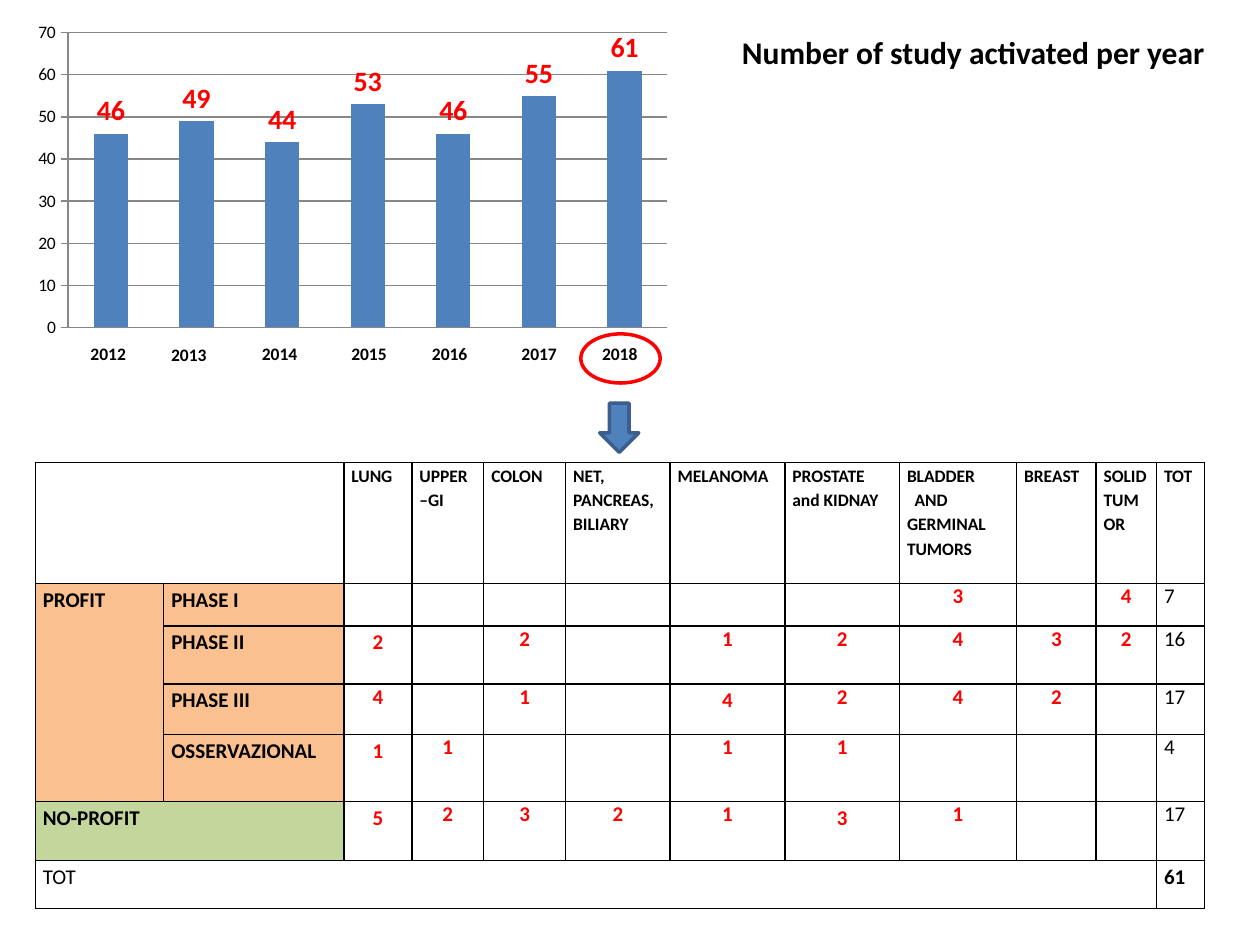
from lxml import etree
from pptx import Presentation
from pptx.chart.data import CategoryChartData
from pptx.dml.color import RGBColor
from pptx.enum.chart import XL_CHART_TYPE as ChartType, XL_LABEL_POSITION as LabelPos
from pptx.enum.chart import XL_TICK_MARK as Tick
from pptx.enum.shapes import MSO_SHAPE as Preset
from pptx.enum.text import MSO_ANCHOR as Anchor, PP_ALIGN as Align
from pptx.oxml import parse_xml
from pptx.oxml.ns import nsdecls, qn
from pptx.util import Inches, Pt

FONT = "Calibri"
COLORS = {
    "black": "000000", "white": "FFFFFF", "red": "FF0000", "blue": "4F81BD",
    "dark_blue": "3A5F8C", "grid": "878787", "profit": "FAC090", "no_profit": "C3D69B",
}
STYLES = {
    "title": {"size": Pt(18), "bold": True, "color": "black"},
    "header": {"size": Pt(10), "bold": True, "color": "black"},
    "label": {"size": Pt(12), "bold": True, "color": "black"},
    "count": {"size": Pt(12), "bold": True, "color": "red"},
    "total": {"size": Pt(12), "bold": False, "color": "black"},
    "axis": {"size": Pt(10), "bold": False, "color": "black"},
    "value": {"size": Pt(16), "bold": True, "color": "red"},
}

STUDIES = [46, 49, 44, 53, 46, 55, 61]
YEAR_LEFTS = [0.42, 1.06, 1.78, 2.49, 3.13, 3.84, 4.48]

HEADERS = ["LUNG", "UPPER –GI", "COLON", "NET, PANCREAS, BILIARY", "MELANOMA",
           "PROSTATE and KIDNAY", "BLADDER\nAND GERMINAL TUMORS", "BREAST",
           "SOLID TUMOR", "TOT"]
# Group, phase, then one value for each header
ROWS = [
    ["PROFIT", "PHASE I", "", "", "", "", "", "", "3", "", "4", "7"],
    ["", "PHASE II", "2", "", "2", "", "1", "2", "4", "3", "2", "16"],
    ["", "PHASE III", "4", "", "1", "", "4", "2", "4", "2", "", "17"],
    ["", "OSSERVAZIONAL", "1", "1", "", "", "1", "1", "", "", "", "4"],
    ["NO-PROFIT", "", "5", "2", "3", "2", "1", "3", "1", "", "", "17"],
]
COL_WIDTHS = [1.02, 1.43, 0.54, 0.57, 0.65, 0.83, 0.91, 0.91, 0.93, 0.63, 0.48, 0.38]
ROW_HEIGHTS = [0.96, 0.34, 0.46, 0.4, 0.53, 0.47, 0.38]
LOOSE_COUNTS = {(2, 2), (3, 6), (4, 2), (5, 2), (5, 7)}
LOOSE = 1.15


def rgb(name):
    return RGBColor.from_string(COLORS[name])


def set_font(font, style):
    font.name = FONT
    for key, value in STYLES[style].items():
        if key == "color":
            font.color.rgb = rgb(value)
        else:
            setattr(font, key, value)


def add_text(page, left, top, width, height, text, style, wrap=True):
    box = page.shapes.add_textbox(Inches(left), Inches(top), Inches(width), Inches(height))
    box.text_frame.word_wrap = wrap
    span = box.text_frame.paragraphs[0].add_run()
    span.text = text
    set_font(span.font, style)


def add_preset(page, kind, left, top, width, height, fill, line):
    shape = page.shapes.add_shape(kind, Inches(left), Inches(top), Inches(width), Inches(height))
    shape.shadow.inherit = False
    shape.fill.solid()
    shape.fill.fore_color.rgb = rgb(fill)
    shape.line.color.rgb = rgb(line)
    shape.line.width = Pt(2)


def add_year_chart(page, left, top, width, height):
    # Ring around the last year, behind the chart
    add_preset(page, Preset.OVAL, left + 4.41, top + 2.52, 0.63, 0.39, "white", "red")

    data = CategoryChartData()
    data.categories = [str(n + 1) for n in range(len(STUDIES))]
    data.add_series("Series 1", STUDIES)
    chart = page.shapes.add_chart(ChartType.COLUMN_CLUSTERED, Inches(left), Inches(top),
                                  Inches(width), Inches(height), data).chart
    chart.has_legend = False
    chart.has_title = False
    set_font(chart.font, "axis")
    clear = parse_xml(f'<c:spPr {nsdecls("c", "a")}><a:noFill/><a:ln><a:noFill/></a:ln></c:spPr>')
    chart._chartSpace.find(qn("c:chart")).addnext(clear)

    # Axes
    chart.category_axis.visible = False
    axis = chart.value_axis
    axis.minimum_scale, axis.maximum_scale, axis.major_unit = 0, 70, 10
    axis.major_tick_mark = Tick.OUTSIDE
    axis.has_major_gridlines = True
    for line in (axis.format.line, axis.major_gridlines.format.line):
        line.color.rgb = rgb("grid")
        line.width = Pt(0.75)

    # Columns and their values
    plot = chart.plots[0]
    plot.gap_width = 150
    plot.vary_by_categories = False
    fill = plot.series[0].format.fill
    fill.solid()
    fill.fore_color.rgb = rgb("blue")
    plot.has_data_labels = True
    labels = plot.data_labels
    labels.show_value = True
    labels.position = LabelPos.OUTSIDE_END
    set_font(labels.font, "value")

    # Years under the columns
    for index, offset in enumerate(YEAR_LEFTS):
        drop = 2.55 if index == 1 else 2.54
        add_text(page, left + offset, top + drop, 0.5, 0.21, str(2012 + index), "header")


def set_borders(cell):
    props = cell._tc.get_or_add_tcPr()
    for index, side in enumerate(("lnL", "lnR", "lnT", "lnB")):
        line = etree.Element(qn(f"a:{side}"), w=str(Pt(1)))
        fill = etree.SubElement(line, qn("a:solidFill"))
        etree.SubElement(fill, qn("a:srgbClr"), val=COLORS["black"])
        props.insert(index, line)


def fill_cell(cell, text, style, spacing=None, align=Align.LEFT):
    frame = cell.text_frame
    for index, line in enumerate(text.split("\n")):
        para = frame.add_paragraph() if index else frame.paragraphs[0]
        para.alignment = align
        if spacing:
            para.line_spacing = spacing
        if index:
            para._p.get_or_add_pPr().set("indent", str(Inches(0.06)))
        span = para.add_run()
        span.text = line
        set_font(span.font, style)


def add_study_table(page, left, top):
    table = page.shapes.add_table(len(ROW_HEIGHTS), len(COL_WIDTHS), Inches(left), Inches(top),
                                  Inches(sum(COL_WIDTHS)), Inches(sum(ROW_HEIGHTS))).table
    table.first_row = table.horz_banding = False
    for column, width in zip(table.columns, COL_WIDTHS):
        column.width = Inches(width)
    for row, height in zip(table.rows, ROW_HEIGHTS):
        row.height = Inches(height)

    # Plain bordered cells, coloured at the row labels
    for r in range(len(ROW_HEIGHTS)):
        for c in range(len(COL_WIDTHS)):
            cell = table.cell(r, c)
            cell.margin_left = cell.margin_right = Inches(0.06)
            cell.margin_top = cell.margin_bottom = 0
            cell.vertical_anchor = Anchor.TOP
            if c < 2 and 1 <= r <= 5:
                cell.fill.solid()
                cell.fill.fore_color.rgb = rgb("profit" if r < 5 else "no_profit")
            else:
                cell.fill.background()
            set_borders(cell)
    last_row, last_col = len(ROW_HEIGHTS) - 1, len(COL_WIDTHS) - 1
    for start, end in [((0, 0), (0, 1)), ((1, 0), (4, 0)), ((5, 0), (5, 1)),
                       ((last_row, 0), (last_row, last_col - 1))]:
        table.cell(*start).merge(table.cell(*end))

    # Header, body and grand total
    for c, text in enumerate(HEADERS, 2):
        fill_cell(table.cell(0, c), text, "header", LOOSE)
    for r, values in enumerate(ROWS, 1):
        for c, text in enumerate(values):
            if not text:
                continue
            cell = table.cell(r, c)
            if c < 2:
                fill_cell(cell, text, "label", LOOSE)
            elif c == last_col:
                fill_cell(cell, text, "total")
            else:
                spacing = LOOSE if (r, c) in LOOSE_COUNTS else None
                fill_cell(cell, text, "count", spacing, Align.CENTER)
    fill_cell(table.cell(last_row, 0), "TOT", "total", LOOSE)
    fill_cell(table.cell(last_row, last_col), "61", "label", LOOSE)


def main():
    deck = Presentation()
    deck.slide_width, deck.slide_height = Inches(10), Inches(7.5)
    page = deck.slides.add_slide(deck.slide_layouts[6])
    add_year_chart(page, 0.2, 0.13, 5.2, 2.6)
    add_text(page, 5.79, 0.21, 3.91, 0.4, "Number of study activated per year", "title", wrap=False)
    add_study_table(page, 0.28, 3.67)
    add_preset(page, Preset.DOWN_ARROW, 4.76, 3.2, 0.31, 0.39, "blue", "dark_blue")
    deck.save("out.pptx")


if __name__ == "__main__":
    main()
